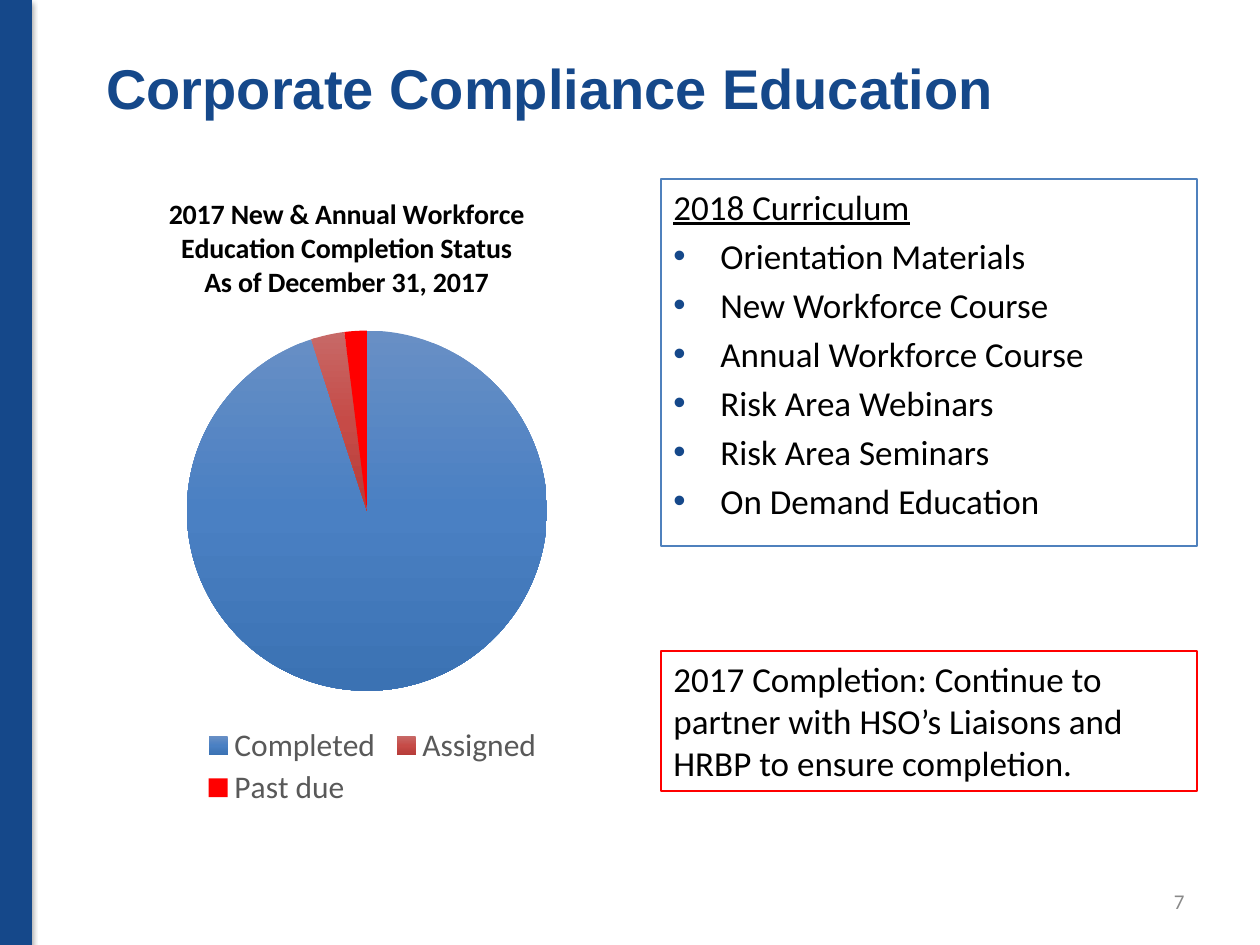
from lxml import etree
from pptx import Presentation
from pptx.chart.data import CategoryChartData as ChartData
from pptx.dml.color import RGBColor
from pptx.enum.chart import XL_CHART_TYPE as Kind, XL_LEGEND_POSITION as Pos
from pptx.enum.shapes import MSO_SHAPE as Shape
from pptx.enum.text import MSO_ANCHOR as Anchor, PP_ALIGN as Align
from pptx.oxml import parse_xml
from pptx.oxml.ns import qn
from pptx.util import Pt

DPI = 126
NAVY, BLACK, RED = "15488A", "000000", "FF0000"
NS_A = 'xmlns:a="http://schemas.openxmlformats.org/drawingml/2006/main"'
NS_C = 'xmlns:c="http://schemas.openxmlformats.org/drawingml/2006/chart"'


def px(n):
    return round(n * 914400 / DPI)


def color(code):
    return RGBColor.from_string(code)


def style(font, size, code, bold=False, name="Calibri"):
    font.name, font.size, font.bold = name, Pt(size), bold
    font.color.rgb = color(code)


def place(node, index, **spots):
    """Give a chart part a fixed layout, in fractions of the chart."""
    for old in node.findall(qn("c:layout")):
        node.remove(old)
    modes = "".join(f'<c:{k}Mode val="edge"/>' for k in "xy")
    vals = "".join(f'<c:{k} val="{v}"/>' for k, v in spots.items())
    target = '<c:layoutTarget val="inner"/>' if index == 0 else ""
    node.insert(index, parse_xml(
        f"<c:layout {NS_C}><c:manualLayout>{target}{modes}{vals}"
        "</c:manualLayout></c:layout>"))


def shade(point, *codes):
    """Fill a pie slice from top to bottom with evenly spaced colours."""
    step = 100000 // (len(codes) - 1)
    stops = "".join(f'<a:gs pos="{i * step}"><a:srgbClr val="{c}"/></a:gs>'
                    for i, c in enumerate(codes))
    point.format.fill.background()
    props = point.format.fill._xPr
    props.replace(props.find(qn("a:noFill")), parse_xml(
        f'<a:gradFill {NS_A} rotWithShape="1"><a:gsLst>{stops}</a:gsLst>'
        '<a:lin ang="5400000" scaled="0"/></a:gradFill>'))


class Deck:
    def __init__(self, wide, high):
        self.prs = Presentation()
        self.prs.slide_width, self.prs.slide_height = px(wide), px(high)
        self.slide = self.prs.slides.add_slide(self.prs.slide_layouts[6])

    def bar(self, box, fill):
        bar = self.slide.shapes.add_shape(Shape.RECTANGLE, *map(px, box))
        bar.fill.solid()
        bar.fill.fore_color.rgb = color(fill)
        bar.line.fill.background()
        bar.shadow.inherit = False
        glow = bar._element.spPr.find(qn("a:effectLst"))
        glow.append(parse_xml(
            f'<a:outerShdw {NS_A} blurRad="39370" dist="22860" dir="5400000" '
            'rotWithShape="0"><a:srgbClr val="000000"><a:alpha val="35000"/>'
            '</a:srgbClr></a:outerShdw>'))

    def text(self, box, lines, size, code, line=None, bold=False,
             name="Calibri", align=Align.LEFT, anchor=Anchor.TOP):
        shape = self.slide.shapes.add_textbox(*map(px, box))
        if line:
            shape.line.color.rgb = color(line)
            shape.line.width = Pt(0.75)
        frame = shape.text_frame
        frame.word_wrap, frame.vertical_anchor = True, anchor
        frame.text = "\n".join(lines)
        for para in frame.paragraphs:
            para.alignment = align
            style(para.font, size, code, bold, name)
        return frame.paragraphs

    def bullets(self, box, head, items, size, line):
        first, *rest = self.text(box, [head, *items], size, BLACK, line)
        first.font.underline = True
        for para in rest:
            para.space_before = Pt(4)
            props = para._p.get_or_add_pPr()
            props.set("marL", str(px(47)))
            props.set("indent", str(-px(47)))
            tint = etree.Element(qn("a:buClr"))
            etree.SubElement(tint, qn("a:srgbClr"), val=NAVY)
            face = etree.Element(qn("a:buFont"), typeface="Arial")
            mark = etree.Element(qn("a:buChar"), char="•")
            at = list(props).index(props.find(qn("a:defRPr")))
            props[at:at] = [tint, face, mark]

    def pie(self, box, title, parts):
        data = ChartData()
        data.categories = parts.keys()
        data.add_series("Series 1", [val for val, _ in parts.values()])
        chart = self.slide.shapes.add_chart(
            Kind.PIE, *map(px, box), data).chart
        style(chart.font, 10, BLACK)

        # Title
        chart.has_title = True
        frame = chart.chart_title.text_frame
        frame.text = title
        for para in frame.paragraphs:
            style(para.font, 16, BLACK, bold=True)
        place(chart.chart_title._element, 1, x=0.13, y=0.02)

        # Slices
        plot = chart.plots[0]
        plot.vary_by_categories = True
        for i, (_, fill) in enumerate(parts.values()):
            point = plot.series[0].points[i]
            if len(fill) > 1:
                shade(point, *fill)
            else:
                point.format.fill.solid()
                point.format.fill.fore_color.rgb = color(fill[0])
        area = chart._chartSpace.chart.plotArea
        place(area, 0, x=0.17, y=0.24, w=0.66, h=0.57)

        # Legend
        chart.has_legend = True
        chart.legend.position = Pos.BOTTOM
        chart.legend.include_in_layout = False
        style(chart.legend.font, 18, "595959")
        place(chart.legend._element, 1, x=0.19, y=0.86, w=0.64, h=0.14)


def main():
    deck = Deck(1260, 945)

    # Side band and heading
    deck.bar((0, 0, 32, 945), NAVY)
    deck.text((94, 38, 1134, 98), ["Corporate Compliance Education"], 32,
              NAVY, bold=True, name="Arial", anchor=Anchor.MIDDLE)

    # Completion chart
    deck.pie((94, 179, 546, 632),
             "2017 New & Annual Workforce Education Completion Status\n"
             "As of December 31, 2017",
             {"Completed": (95, ["688FC5", "4A80C3", "3B72B3"]),
              "Assigned": (3, ["C76967", "C64B47", "B63C39"]),
              "Past due": (2, [RED])})

    # Curriculum and next step
    deck.bullets((661, 179, 536, 367), "2018 Curriculum",
                 ["Orientation Materials", "New Workforce Course",
                  "Annual Workforce Course", "Risk Area Webinars",
                  "Risk Area Seminars", "On Demand Education"], 20, "4F81BD")
    deck.text((661, 651, 536, 140),
              ["2017 Completion: Continue to partner with HSO’s Liaisons "
               "and HRBP to ensure completion."], 20, BLACK, RED)

    # Page number
    deck.text((903, 876, 294, 50), ["7"], 12, "898989",
              align=Align.RIGHT, anchor=Anchor.MIDDLE)
    deck.prs.save("out.pptx")


if __name__ == "__main__":
    main()
